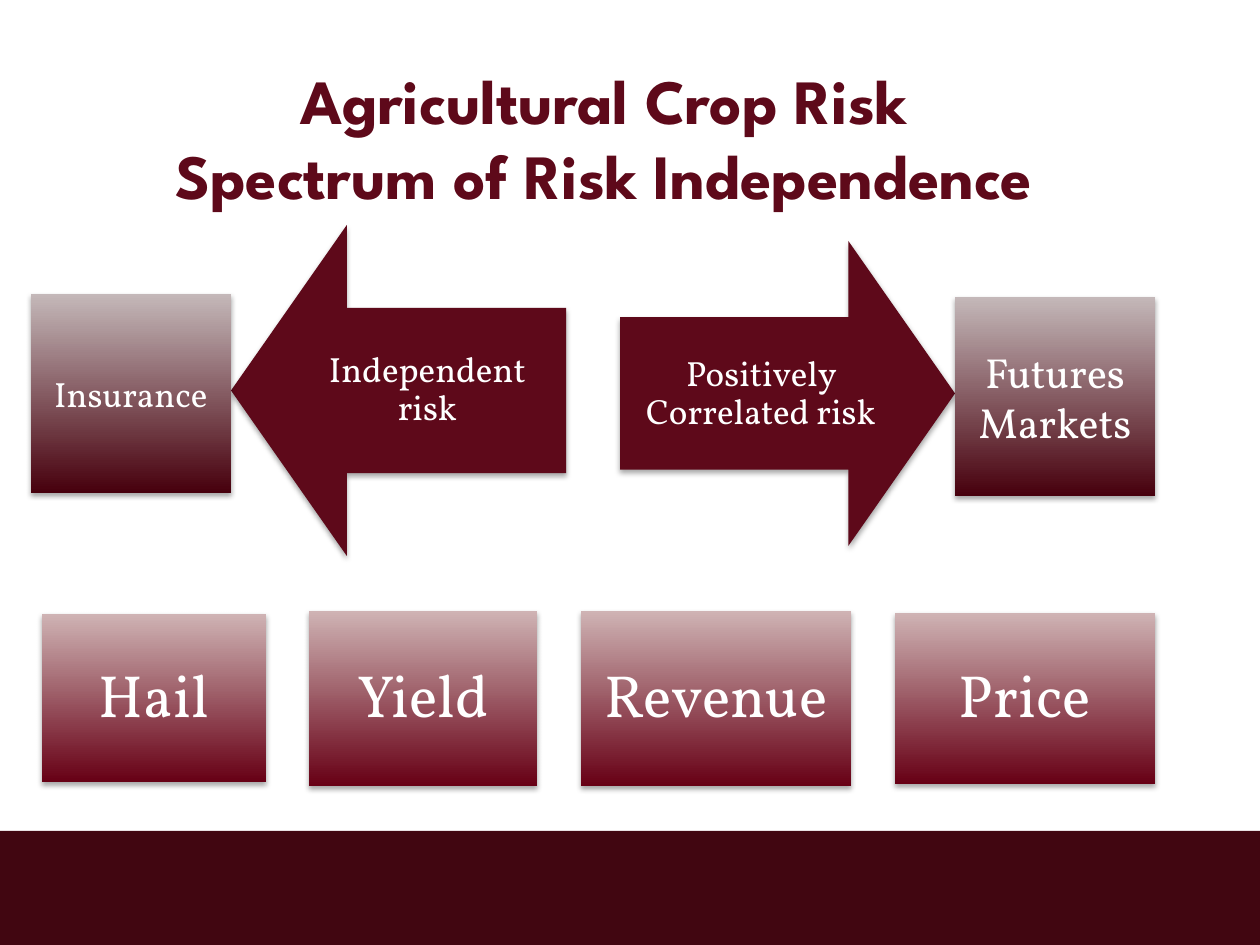
from lxml import etree
from pptx import Presentation
from pptx.dml.color import RGBColor
from pptx.enum.shapes import MSO_SHAPE
from pptx.enum.text import MSO_ANCHOR, MSO_AUTO_SIZE, PP_ALIGN
from pptx.oxml import parse_xml
from pptx.util import Emu, Pt

RECTANGLE = MSO_SHAPE.RECTANGLE
UP_ARROW = MSO_SHAPE.UP_ARROW
MIDDLE = MSO_ANCHOR.MIDDLE
CENTER = PP_ALIGN.CENTER
NO_AUTOFIT = MSO_AUTO_SIZE.NONE

PX = 914400 / 126
HEADING_FONT, BODY_FONT = "League Spartan", "Vollkorn"
MAROON, BAND, WHITE = "5E091A", "410611", "FFFFFF"
RISK_GRADIENT = ("670015", "CFB3B4")
MARKET_GRADIENT = ("47000D", "C4B8B9")
SHADOW = (
    '<a:effectLst xmlns:a="http://schemas.openxmlformats.org/drawingml/2006/main">'
    '<a:outerShdw blurRad="39370" dist="22860" dir="5400000" rotWithShape="0">'
    '<a:srgbClr val="000000"><a:alpha val="35000"/></a:srgbClr>'
    "</a:outerShdw></a:effectLst>"
)


def px(length):
    """Turn pixels into EMU."""
    return Emu(round(length * PX))


def colour(value):
    """Turn a hex string into a colour."""
    return RGBColor.from_string(value)


def write(frame, lines, size, font=BODY_FONT, ink=WHITE, bold=False, inset=None, spacing=None):
    """Write centred lines into a text frame."""
    frame.word_wrap = True
    frame.auto_size = NO_AUTOFIT
    frame.vertical_anchor = MIDDLE
    if inset is not None:
        frame.margin_left = frame.margin_right = px(inset)
        frame.margin_top = frame.margin_bottom = px(inset)
    paragraph = frame.paragraphs[0]
    paragraph.alignment = CENTER
    if spacing:
        paragraph.line_spacing = spacing
    for index, line in enumerate(lines):
        if index:
            paragraph.add_line_break()
        run = paragraph.add_run()
        run.text = line
        run.font.name = font
        run.font.size = Pt(size)
        run.font.bold = bold
        run.font.color.rgb = colour(ink)


def add_block(slide, kind, box, fill, shadowed=True):
    """Add an unlined shape with a solid colour or a bottom-to-top gradient."""
    block = slide.shapes.add_shape(kind, *map(px, box))
    block.line.fill.background()
    if isinstance(fill, str):
        block.fill.solid()
        block.fill.fore_color.rgb = colour(fill)
    else:
        block.fill.gradient()
        block.fill.gradient_angle = 90
        for stop, shade in zip(block.fill.gradient_stops, fill):
            stop.color.rgb = colour(shade)
    block.shadow.inherit = False
    if shadowed:
        properties = block.element.spPr
        empty_effects = properties.find("{*}effectLst")
        properties.replace(empty_effects, parse_xml(SHADOW))
    return block


def add_title(slide, lines):
    """Place and fill the title."""
    title = slide.shapes.title
    title.left, title.top, title.width, title.height = map(px, (53, 58, 1102, 158))
    write(title.text_frame, lines, 36, HEADING_FONT, MAROON, bold=True)


def add_arrow(slide, box, rotation, label_box, label):
    """Add a turned arrow and its label."""
    arrow = add_block(slide, UP_ARROW, box, MAROON)
    arrow.rotation = rotation
    arrow.adjustments[0], arrow.adjustments[1] = 0.5, 0.35
    caption = slide.shapes.add_textbox(*map(px, label_box))
    write(caption.text_frame, [label], 20, inset=20, spacing=0.9)


def main():
    """Build the slide and save it."""
    deck = Presentation()
    deck.slide_width, deck.slide_height = px(1260), px(945)
    slide = deck.slides.add_slide(deck.slide_layouts[5])

    add_block(slide, RECTANGLE, (0, 831, 1260, 114), BAND, shadowed=False)
    add_title(slide, ["Agricultural Crop Risk", "Spectrum of Risk Independence"])

    add_arrow(slide, (233, 223, 331, 335), 270, (289, 307, 277, 166), "Independent risk")
    add_arrow(slide, (635, 226, 305, 335), 90, (620, 318, 282, 152), "Positively Correlated risk")

    for label, box in (
        ("Hail", (42, 614, 224, 168)),
        ("Yield", (309, 611, 228, 175)),
        ("Revenue", (581, 611, 270, 175)),
        ("Price", (895, 613, 260, 171)),
    ):
        risk = add_block(slide, RECTANGLE, box, RISK_GRADIENT)
        write(risk.text_frame, [label], 34, inset=18, spacing=0.9)

    for label, left, top, size in (("Insurance", 31, 294, 20), ("Futures Markets", 955, 297, 24)):
        market = add_block(slide, RECTANGLE, (left, top, 200, 199), MARKET_GRADIENT)
        write(market.text_frame, [label], size)

    deck.save("out.pptx")


if __name__ == "__main__":
    main()
